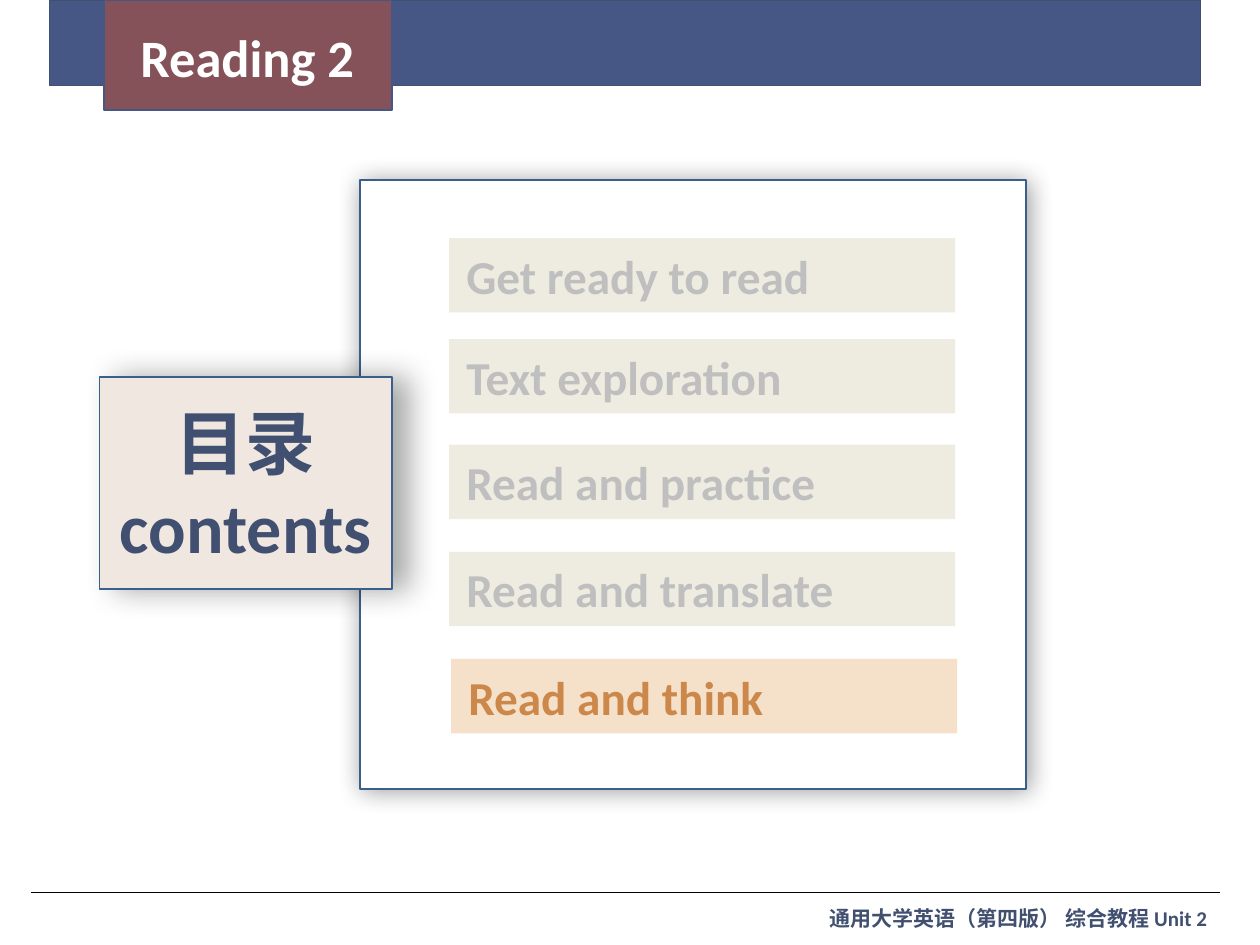
from lxml import etree
from pptx import Presentation
from pptx.dml.color import RGBColor
from pptx.enum.shapes import MSO_CONNECTOR, MSO_SHAPE
from pptx.enum.text import MSO_ANCHOR, MSO_AUTO_SIZE, PP_ALIGN
from pptx.oxml.ns import qn
from pptx.util import Cm, Pt

RECTANGLE = MSO_SHAPE.RECTANGLE
STRAIGHT = MSO_CONNECTOR.STRAIGHT
TOP, MIDDLE = MSO_ANCHOR.TOP, MSO_ANCHOR.MIDDLE
LEFT, CENTER = PP_ALIGN.LEFT, PP_ALIGN.CENTER
FIXED_SIZE = MSO_AUTO_SIZE.NONE

NAVY = RGBColor(0x41, 0x50, 0x70)
INDIGO = RGBColor(0x46, 0x56, 0x85)
STEEL = RGBColor(0x3A, 0x5F, 0x8C)
MAROON = RGBColor(0x85, 0x52, 0x59)
BLUSH = RGBColor(0xF0, 0xE7, 0xE1)
IVORY = RGBColor(0xEE, 0xEC, 0xE1)
PEACH = RGBColor(0xF5, 0xE1, 0xCA)
ORANGE = RGBColor(0xCC, 0x88, 0x4A)
SILVER = RGBColor(0xBF, 0xBF, 0xBF)
WHITE = RGBColor(0xFF, 0xFF, 0xFF)
BLACK = RGBColor(0, 0, 0)


class SlideBuilder:
    latin_font = "Calibri"
    chinese_font = "Noto Sans CJK SC"
    outline_width = Pt(2)

    def __init__(self, slide):
        self.slide = slide

    def place(self, shape, left, top, width, height):
        shape.left, shape.top = Cm(left), Cm(top)
        shape.width, shape.height = Cm(width), Cm(height)

    def paint(self, shape, fill, outline=None):
        shape.fill.solid()
        shape.fill.fore_color.rgb = fill
        if outline is None:
            shape.line.fill.background()
        else:
            shape.line.color.rgb = outline
            shape.line.width = self.outline_width

    def style_run(self, run, size, color, font=None):
        run.font.size = Pt(size)
        run.font.bold = True
        run.font.color.rgb = color
        run.font.name = font or self.latin_font
        east_asian = etree.Element(qn("a:ea"), typeface=self.chinese_font)
        run.font._element.find(qn("a:latin")).addnext(east_asian)

    def set_text(self, shape, text, size, color, align, anchor, indent=0.25):
        frame = shape.text_frame
        frame.text = text
        frame.word_wrap = True
        frame.auto_size = FIXED_SIZE
        frame.vertical_anchor = anchor
        frame.margin_left = Cm(indent)
        for paragraph in frame.paragraphs:
            paragraph.alignment = align
            for run in paragraph.runs:
                self.style_run(run, size, color)

    def box(self, left, top, width, height, fill, outline=None):
        shape = self.slide.shapes.add_shape(
            RECTANGLE, Cm(left), Cm(top), Cm(width), Cm(height))
        shape.shadow.inherit = False
        self.paint(shape, fill, outline)
        return shape

    def cast_shadow(self, shape, opacity, blur, distance, angle):
        effects = shape.element.spPr.find(qn("a:effectLst"))
        shadow = etree.SubElement(
            effects, qn("a:outerShdw"), blurRad=str(Pt(blur)),
            dist=str(Pt(distance)), dir=str(angle * 60000),
            algn="ctr", rotWithShape="0")
        color = etree.SubElement(shadow, qn("a:srgbClr"), val=str(BLACK))
        etree.SubElement(color, qn("a:alpha"), val=str(opacity * 1000))

    def title(self, text, left, top, width, height):
        title = self.slide.shapes.title
        self.place(title, left, top, width, height)
        self.paint(title, MAROON, INDIGO)
        self.set_text(title, text, 60, WHITE, LEFT, TOP, indent=1.47)
        title.text_frame.margin_top = Cm(1.02)
        title.element.getparent().append(title.element)

    def rule(self, start, end, y):
        line = self.slide.shapes.add_connector(
            STRAIGHT, Cm(start), Cm(y), Cm(end), Cm(y))
        line.line.color.rgb = BLACK
        line.line.width = Pt(0.75)
        etree.SubElement(line.element.spPr, qn("a:effectLst"))

    def footer(self, parts, left, top, width, height):
        caption = self.slide.shapes.add_textbox(
            Cm(left), Cm(top), Cm(width), Cm(height))
        caption.text_frame.word_wrap = False
        paragraph = caption.text_frame.paragraphs[0]
        for text, font in parts:
            run = paragraph.add_run()
            run.text = text
            self.style_run(run, 24, NAVY, font)


def main():
    presentation = Presentation()
    presentation.slide_width, presentation.slide_height = Cm(50.8), Cm(38.1)
    builder = SlideBuilder(
        presentation.slides.add_slide(presentation.slide_layouts[5]))

    builder.footer([("通用大学英语（第四版） 综合教程 ", "Arial"),
                    ("Unit 2", "Calibri")], 33.2, 36.37, 17.2, 1.27)
    builder.rule(1.24, 49.17, 35.99)
    builder.box(2, 0, 46.4, 3.45, INDIGO, NAVY)
    builder.title("Reading 2", 4.19, 0, 11.61, 4.45)

    panel = builder.box(14.53, 7.26, 26.85, 24.54, WHITE, STEEL)
    builder.cast_shadow(panel, 40, 29, 3, 45)
    contents = builder.box(4.01, 15.21, 11.79, 8.53, BLUSH, STEEL)
    builder.cast_shadow(contents, 34, 35, 18, 0)
    builder.set_text(contents, "目录\ncontents", 80, NAVY, CENTER, MIDDLE)

    sections = [
        ("Get ready to read", 18.11, 9.6, IVORY, SILVER),
        ("Text exploration", 18.11, 13.67, IVORY, SILVER),
        ("Read and practice", 18.11, 17.93, IVORY, SILVER),
        ("Read and translate", 18.11, 22.25, IVORY, SILVER),
        ("Read and think", 18.19, 26.57, PEACH, ORANGE),
    ]
    for label, left, top, fill, color in sections:
        section = builder.box(left, top, 20.4, 3, fill)
        builder.set_text(section, label, 54, color, LEFT, MIDDLE, indent=0.69)

    presentation.save("out.pptx")


if __name__ == "__main__":
    main()
